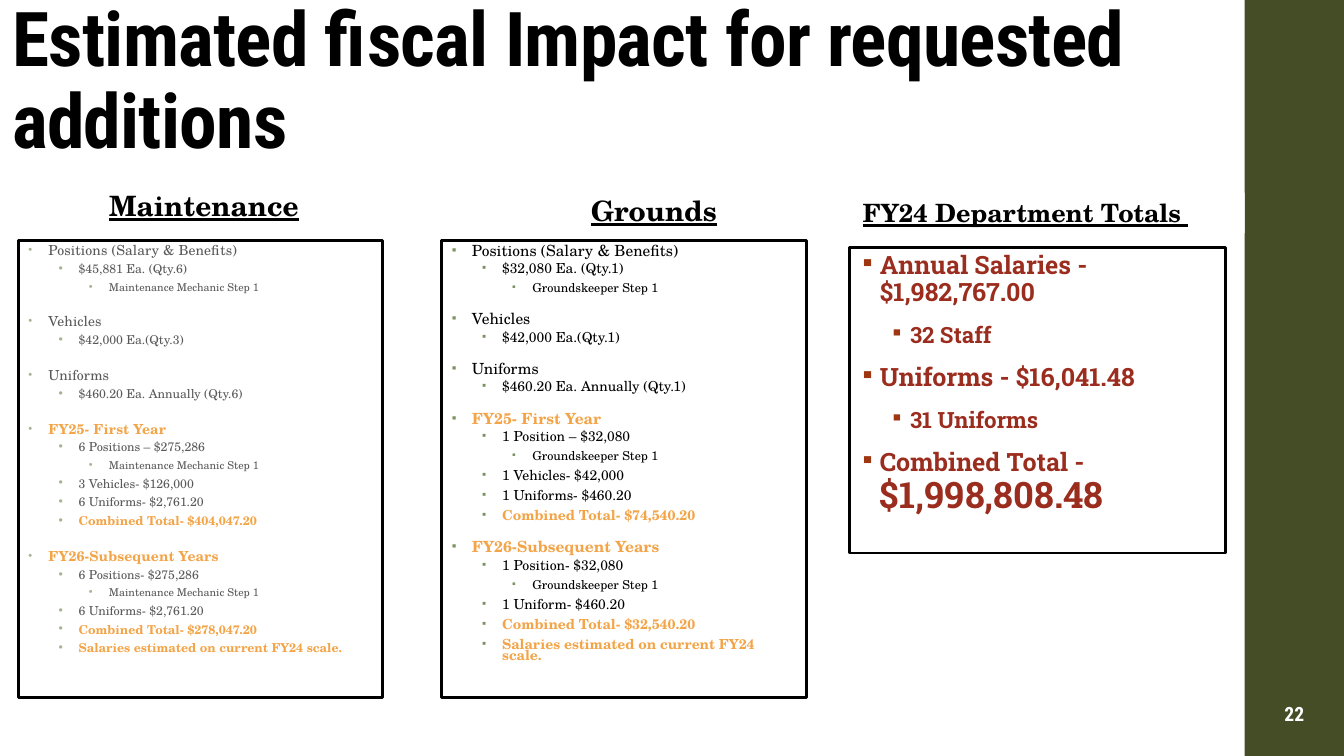
"""Build the slide on the estimated fiscal impact of requested additions."""
from lxml import etree
from pptx import Presentation
from pptx.dml.color import RGBColor
from pptx.enum import shapes, text
from pptx.oxml import ns
from pptx.util import Pt

TITLE = "Estimated fiscal Impact for requested additions"
PLAIN, ACCENT = "plain", "accent"
MAINTENANCE = [
    (0, PLAIN, "Positions (Salary & Benefits)"),
    (1, PLAIN, "$45,881 Ea. (Qty.6)"),
    (2, PLAIN, "Maintenance Mechanic Step 1"),
    (0, PLAIN, "Vehicles"),
    (1, PLAIN, "$42,000 Ea.(Qty.3)"),
    (0, PLAIN, "Uniforms"),
    (1, PLAIN, "$460.20 Ea. Annually (Qty.6)"),
    (0, ACCENT, "FY25- First Year"),
    (1, PLAIN, "6 Positions – $275,286"),
    (2, PLAIN, "Maintenance Mechanic Step 1"),
    (1, PLAIN, "3 Vehicles- $126,000"),
    (1, PLAIN, "6 Uniforms- $2,761.20"),
    (1, ACCENT, "Combined Total- $404,047.20"),
    (0, ACCENT, "FY26-Subsequent Years"),
    (1, PLAIN, "6 Positions- $275,286"),
    (2, PLAIN, "Maintenance Mechanic Step 1"),
    (1, PLAIN, "6 Uniforms- $2,761.20"),
    (1, ACCENT, "Combined Total- $278,047.20"),
    (1, ACCENT, "Salaries estimated on current FY24 scale."),
]
GROUNDS = [
    (0, PLAIN, "Positions (Salary & Benefits)"),
    (1, PLAIN, "$32,080 Ea. (Qty.1)"),
    (2, PLAIN, "Groundskeeper Step 1"),
    (0, PLAIN, "Vehicles"),
    (1, PLAIN, "$42,000 Ea.(Qty.1)"),
    (0, PLAIN, "Uniforms"),
    (1, PLAIN, "$460.20 Ea. Annually (Qty.1)"),
    (0, ACCENT, "FY25- First Year"),
    (1, PLAIN, "1 Position – $32,080"),
    (2, PLAIN, "Groundskeeper Step 1"),
    (1, PLAIN, "1 Vehicles- $42,000"),
    (1, PLAIN, "1 Uniforms- $460.20"),
    (1, ACCENT, "Combined Total- $74,540.20"),
    (0, ACCENT, "FY26-Subsequent Years"),
    (1, PLAIN, "1 Position- $32,080"),
    (2, PLAIN, "Groundskeeper Step 1"),
    (1, PLAIN, "1 Uniform- $460.20"),
    (1, ACCENT, "Combined Total- $32,540.20"),
    (1, ACCENT, "Salaries estimated on current FY24 scale."),
]
TOTALS = [
    (0, ACCENT, "Annual Salaries - $1,982,767.00"),
    (1, ACCENT, "32 Staff"),
    (0, ACCENT, "Uniforms - $16,041.48"),
    (1, ACCENT, "31 Uniforms"),
    (0, ACCENT, "Combined Total - "),
]
GRAND_TOTAL = "$1,998,808.48"

SERIF, SLAB, SANS = "TeX Gyre Schola", "Roboto Slab", "Roboto Condensed"
BLACK, WHITE, OLIVE, ORANGE, RED = "000000", "FFFFFF", "444D26", "F3A447", "9B2D1F"
CENTER = text.PP_ALIGN.CENTER
TOP, MIDDLE, BOTTOM = (text.MSO_ANCHOR.TOP, text.MSO_ANCHOR.MIDDLE,
                       text.MSO_ANCHOR.BOTTOM)

MAINTENANCE_STYLE = dict(
    font=SERIF, plain="595959", accent=ORANGE, bullet="•", bullet_color="A5B592",
    sizes=(9.9, 8.8, 7.7), scales=(80, 100, 100), tracking=(0.1, 0, 0),
    lines=(0.75, 0.7, 0.7), before=(14, 3, 3), after=(2, 3, 3))
GROUNDS_STYLE = dict(
    font=SERIF, plain=BLACK, accent=ORANGE, bullet="▪", bullet_color="7D9263",
    sizes=(11, 9.9, 8.8), scales=(85, 85, 85), tracking=(0, 0, 0),
    lines=(0.7, 0.7, 0.7), before=(12, 4, 4), after=(0, 2, 2))
TOTALS_STYLE = dict(
    font=SLAB, plain=RED, accent=RED, bullet="▪", bullet_color="9E3611",
    sizes=(18, 16), scales=(85, 85), tracking=(0, 0),
    lines=(0.9, 0.9), before=(12, 12), after=(0, 0))


def color(code):
    return RGBColor.from_string(code)


def apply(target, values):
    for name, value in values.items():
        setattr(target, name, value)


def place(box, left, top, width, height, **frame_format):
    apply(box, dict(left=Pt(left), top=Pt(top), width=Pt(width), height=Pt(height)))
    apply(box.text_frame, dict(word_wrap=True, auto_size=text.MSO_AUTO_SIZE.NONE,
                               **frame_format))
    return box


def add_span(para, words, shade, tracking=0, **font_format):
    span = para.add_run()
    span.text = words
    apply(span.font, font_format)
    span.font.color.rgb = color(shade)
    span.font._element.set("spc", str(round(tracking * 100)))


def add_bullet(para, char, shade, scale, level):
    props = para._p.get_or_add_pPr()
    props.set("marL", str(Pt(14.4 + 21.6 * level)))
    props.set("indent", str(-Pt(14.4)))
    holder = etree.SubElement(props, ns.qn("a:buClr"))
    etree.SubElement(holder, ns.qn("a:srgbClr"), val=shade)
    etree.SubElement(props, ns.qn("a:buSzPct"), val=str(scale * 1000))
    etree.SubElement(props, ns.qn("a:buChar"), char=char)


def fill_list(box, items, style):
    box.line.color.rgb = color(BLACK)
    box.line.width = Pt(2)
    frame = box.text_frame
    for number, (level, kind, words) in enumerate(items):
        para = frame.add_paragraph() if number else frame.paragraphs[0]
        apply(para, dict(level=level, alignment=text.PP_ALIGN.LEFT,
                         line_spacing=style["lines"][level],
                         space_before=Pt(style["before"][level]),
                         space_after=Pt(style["after"][level])))
        add_bullet(para, style["bullet"], style["bullet_color"],
                   style["scales"][level], level)
        add_span(para, words, style[kind], style["tracking"][level],
                 name=style["font"], size=Pt(style["sizes"][level]),
                 bold=kind == ACCENT)


def fill_heading(box, words, size, **para_format):
    para = box.text_frame.paragraphs[0]
    apply(para, dict(alignment=CENTER, **para_format))
    add_span(para, words, BLACK, name=SERIF, size=Pt(size), bold=True, underline=True)
    return para


def main():
    deck = Presentation()
    deck.slide_width, deck.slide_height = Pt(960), Pt(540)
    page = deck.slides.add_slide(deck.slide_layouts.get_by_name("Comparison"))
    for holder in list(page.placeholders):
        if holder.placeholder_format.idx >= 10:
            holder._element.getparent().remove(holder._element)
    slots = {slot.placeholder_format.idx: slot for slot in page.placeholders}

    band = page.shapes.add_shape(shapes.MSO_SHAPE.RECTANGLE,
                                 Pt(889), Pt(0), Pt(71), Pt(540))
    band.shadow.inherit = False
    band.fill.solid()
    band.fill.fore_color.rgb = color(OLIVE)
    band.line.fill.background()

    title = place(slots[0], 1.5, 7, 960, 114, vertical_anchor=BOTTOM,
                  margin_left=Pt(7.2), margin_right=Pt(7.2),
                  margin_top=Pt(2.2), margin_bottom=Pt(3.6))
    para = title.text_frame.paragraphs[0]
    apply(para, dict(alignment=text.PP_ALIGN.LEFT, line_spacing=0.9))
    add_span(para, TITLE, BLACK, -0.5, name=SANS, size=Pt(54), bold=True)

    columns = [
        ("Maintenance", slots[1], (70.5, 112.5), BOTTOM, (0.95, 0, 2),
         slots[2], 13, MAINTENANCE, MAINTENANCE_STYLE),
        ("Grounds", slots[3], (396.5, 126.5), MIDDLE, (0.9, 12, 0),
         slots[4], 315.5, GROUNDS, GROUNDS_STYLE),
    ]
    for name, head, corner, anchor, spacing, body, left, items, style in columns:
        place(head, *corner, 159, 50.5, vertical_anchor=anchor)
        line, before, after = spacing
        para = fill_heading(head, name, 20, line_spacing=line,
                            space_before=Pt(before), space_after=Pt(after))
        add_span(para, "\t", style["bullet_color"], name=SERIF, size=Pt(20),
                 bold=False, underline=False)
        place(body, left, 172, 260.5, 326, vertical_anchor=TOP)
        fill_list(body, items, style)

    def add_box(*area, **frame_format):
        return place(page.shapes.add_textbox(0, 0, 0, 0), *area, **frame_format)

    totals_head = add_box(576, 137.5, 313, 29)
    totals_head.fill.solid()
    totals_head.fill.fore_color.rgb = color(WHITE)
    fill_heading(totals_head, "FY24 Department Totals ", 18)
    totals = add_box(607, 177, 268.5, 218, vertical_anchor=TOP)
    fill_list(totals, TOTALS, TOTALS_STYLE)
    add_span(totals.text_frame.paragraphs[-1], GRAND_TOTAL, RED,
             name=SLAB, size=Pt(26), bold=True)

    number = add_box(889, 486, 71, 47, vertical_anchor=MIDDLE,
                     margin_left=Pt(3.6), margin_right=Pt(3.6))
    para = number.text_frame.paragraphs[0]
    para.alignment = CENTER
    add_span(para, "22", WHITE, name=SANS, size=Pt(14), bold=True)
    deck.save("out.pptx")


if __name__ == "__main__":
    main()
